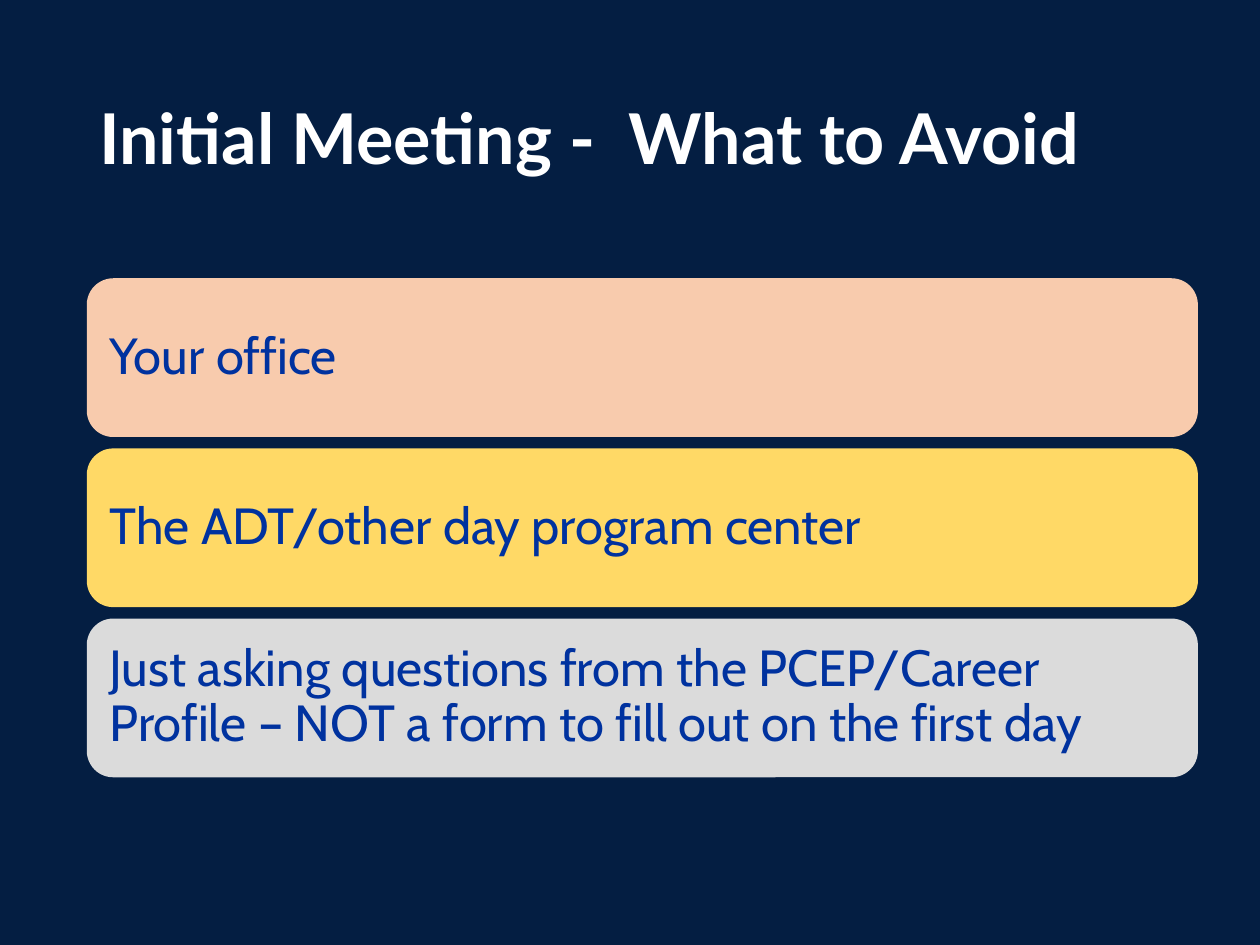
from pptx import Presentation
from pptx.dml.color import RGBColor
from pptx.enum.shapes import MSO_SHAPE
from pptx.enum.text import MSO_ANCHOR, MSO_AUTO_SIZE, PP_ALIGN
from pptx.util import Cm, Pt

ROUNDED = MSO_SHAPE.ROUNDED_RECTANGLE
MIDDLE = MSO_ANCHOR.MIDDLE
NO_AUTOFIT = MSO_AUTO_SIZE.NONE
LEFT = PP_ALIGN.LEFT

NAVY = RGBColor(0x04, 0x1E, 0x42)
WHITE = RGBColor(0xFF, 0xFF, 0xFF)
BLUE = RGBColor(0x00, 0x32, 0x9F)
PEACH = RGBColor(0xF8, 0xCB, 0xAD)
YELLOW = RGBColor(0xFF, 0xD9, 0x66)
GREY = RGBColor(0xDB, 0xDB, 0xDB)

MARGIN_LEFT = 1.75
BAR_TOP = 5.61
BAR_HEIGHT = 3.2
BAR_PITCH = 3.43

BARS = [
    ("Your office", PEACH),
    ("The ADT/other day program center", YELLOW),
    ("Just asking questions from the PCEP/Career Profile – NOT a form "
     "to fill out on the first day", GREY),
]


def set_text(sp, text, font_name, size, color, bold=False):
    tf = sp.text_frame
    tf.text = text
    tf.word_wrap = True
    tf.auto_size = NO_AUTOFIT
    tf.vertical_anchor = MIDDLE
    p = tf.paragraphs[0]
    p.alignment = LEFT
    p.line_spacing = 0.9
    p.font.name = font_name
    p.font.size = Pt(size)
    p.font.bold = bold
    p.font.color.rgb = color
    return tf


def add_title(s, text):
    sp = s.shapes.title
    sp.left, sp.top = Cm(MARGIN_LEFT), Cm(1.01)
    sp.width, sp.height = Cm(21.9), Cm(3.68)
    set_text(sp, text, "Lato", 40, WHITE, bold=True)


def add_bar(s, top, text, fill):
    sp = s.shapes.add_shape(ROUNDED, Cm(MARGIN_LEFT), Cm(top), Cm(22.4), Cm(BAR_HEIGHT))
    sp.shadow.inherit = False
    sp.fill.solid()
    sp.fill.fore_color.rgb = fill
    sp.line.fill.background()
    tf = set_text(sp, text, "Cabin", 29, BLUE)
    tf.margin_left = tf.margin_right = tf.margin_top = tf.margin_bottom = Cm(0.3)


def main():
    prs = Presentation()
    prs.slide_width, prs.slide_height = Cm(25.4), Cm(19.05)
    s = prs.slides.add_slide(prs.slide_layouts[5])
    s.background.fill.solid()
    s.background.fill.fore_color.rgb = NAVY
    add_title(s, "Initial Meeting -  What to Avoid")
    for i, (text, fill) in enumerate(BARS):
        add_bar(s, BAR_TOP + i * BAR_PITCH, text, fill)
    prs.save("out.pptx")


if __name__ == "__main__":
    main()
